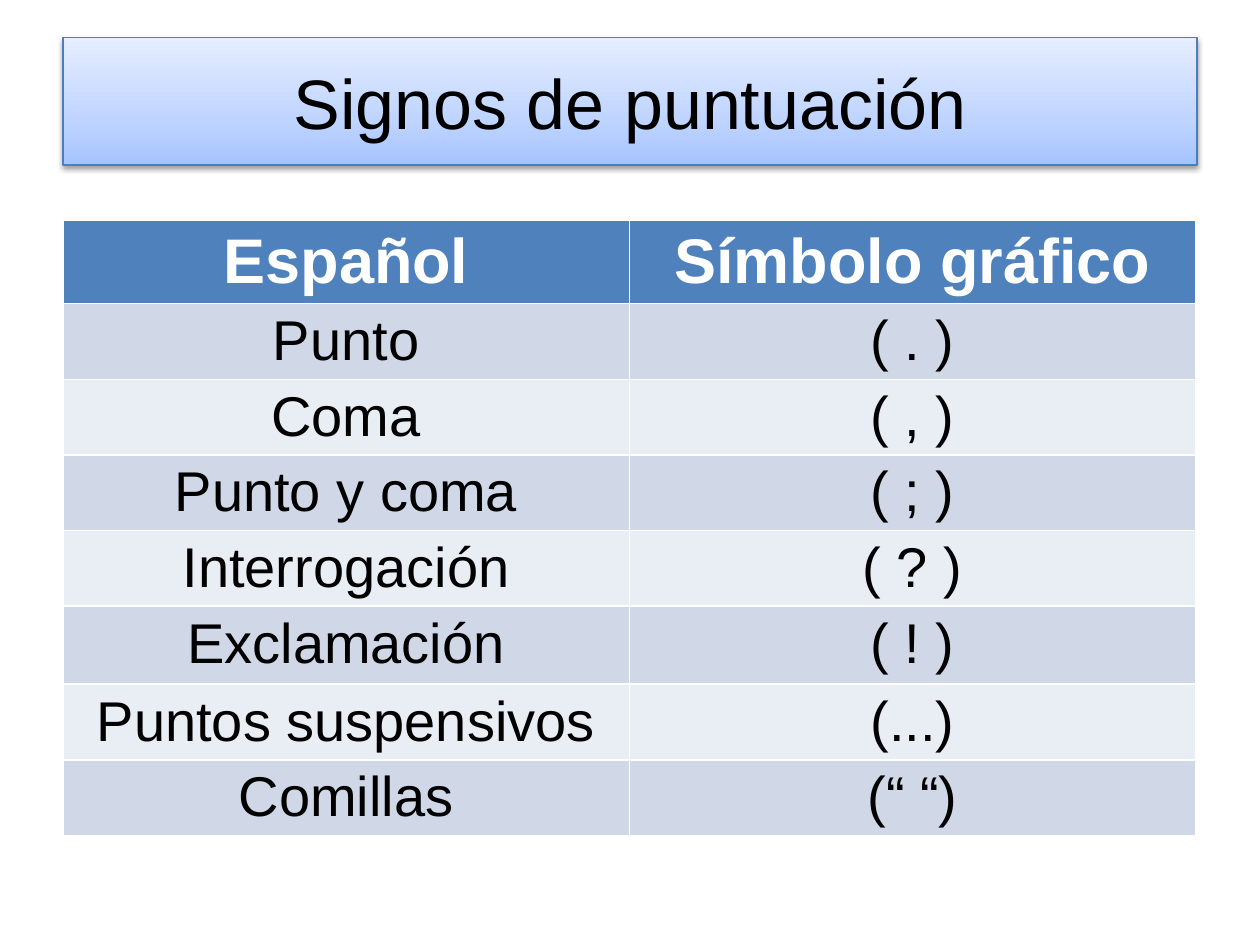
from copy import deepcopy
from dataclasses import dataclass

from lxml.etree import SubElement
from pptx import Presentation
from pptx.dml.color import RGBColor
from pptx.enum.shapes import MSO_SHAPE
from pptx.enum.text import MSO_ANCHOR, PP_ALIGN
from pptx.oxml.ns import qn
from pptx.util import Inches, Pt


@dataclass(frozen=True)
class Theme:
    font: str = "Arial"
    ink: str = "000000"
    paper: str = "FFFFFF"
    header: str = "4F81BD"
    bands: tuple = ("D0D8E8", "E9EDF4")
    banner_line: str = "4B7EBC"
    banner_stops: tuple = ((0, "A4C4FF"), (0.35, "BFD4FF"), (1, "E6EEFF"))
    title_size: int = 40
    header_size: int = 36
    body_size: int = 32


THEME = Theme()
SIGNS = (
    ("Español", "Símbolo gráfico"),
    ("Punto", "( . )"),
    ("Coma", "( , )"),
    ("Punto y coma", "( ; )"),
    ("Interrogación", "( ? )"),
    ("Exclamación", "( ! )"),
    ("Puntos suspensivos", "(...)"),
    ("Comillas", "(“ “)"),
)
ROW_HEIGHTS = (0.65, 0.6, 0.6, 0.6, 0.6, 0.62, 0.6, 0.6)


def write(text_frame, text, size, color, bold=False):
    text_frame.text = text
    paragraph = text_frame.paragraphs[0]
    paragraph.alignment = PP_ALIGN.CENTER
    font = paragraph.runs[0].font
    font.name = THEME.font
    font.size = Pt(size)
    font.bold = bold
    font.color.rgb = RGBColor.from_string(color)


def fill_gradient(shape, stops, angle):
    shape.fill.gradient()
    shape.fill.gradient_angle = angle
    stop_list = shape._element.spPr.find(".//" + qn("a:gsLst"))
    while len(stop_list) < len(stops):
        stop_list.append(deepcopy(stop_list[0]))
    for stop, (position, color) in zip(shape.fill.gradient_stops, stops):
        stop.position = position
        stop.color.rgb = RGBColor.from_string(color)


def cast_shadow(shape, color, opacity, blur, distance):
    shape.shadow.inherit = False
    effects = shape._element.spPr.find(qn("a:effectLst"))
    shadow = SubElement(
        effects, qn("a:outerShdw"), blurRad=str(Pt(blur)),
        dist=str(Pt(distance)), dir="5400000", rotWithShape="0",
    )
    tint = SubElement(shadow, qn("a:srgbClr"), val=color)
    SubElement(tint, qn("a:alpha"), val=str(opacity * 1000))


def add_title(slide, left, top, width, height):
    banner = slide.shapes.add_shape(MSO_SHAPE.RECTANGLE, left, top, width, height)
    fill_gradient(banner, THEME.banner_stops, 90)
    banner.line.color.rgb = RGBColor.from_string(THEME.banner_line)
    banner.line.width = Pt(0.75)
    cast_shadow(banner, THEME.ink, 38, 3.1, 1.6)
    banner.text_frame.vertical_anchor = MSO_ANCHOR.MIDDLE
    write(banner.text_frame, "Signos de puntuación", THEME.title_size, THEME.ink)


def add_signs(slide, left, top, width, height):
    signs = slide.shapes.add_table(
        len(SIGNS), len(SIGNS[0]), left, top, width, height
    ).table
    for row_index, (row, entries) in enumerate(zip(signs.rows, SIGNS)):
        row.height = int(height * ROW_HEIGHTS[row_index] / sum(ROW_HEIGHTS))
        is_header = row_index == 0
        band = THEME.header if is_header else THEME.bands[(row_index - 1) % 2]
        size = THEME.header_size if is_header else THEME.body_size
        color = THEME.paper if is_header else THEME.ink
        for cell, entry in zip(row.cells, entries):
            cell.fill.solid()
            cell.fill.fore_color.rgb = RGBColor.from_string(band)
            write(cell.text_frame, entry, size, color, is_header)


def main():
    presentation = Presentation()
    presentation.slide_width = Inches(10)
    presentation.slide_height = Inches(7.5)
    slide = presentation.slides.add_slide(presentation.slide_layouts[6])
    add_title(slide, Inches(0.5), Inches(0.3), Inches(9), Inches(1.01))
    add_signs(slide, Inches(0.5), Inches(1.75), Inches(8.99), Inches(sum(ROW_HEIGHTS)))
    presentation.save("out.pptx")


if __name__ == "__main__":
    main()
